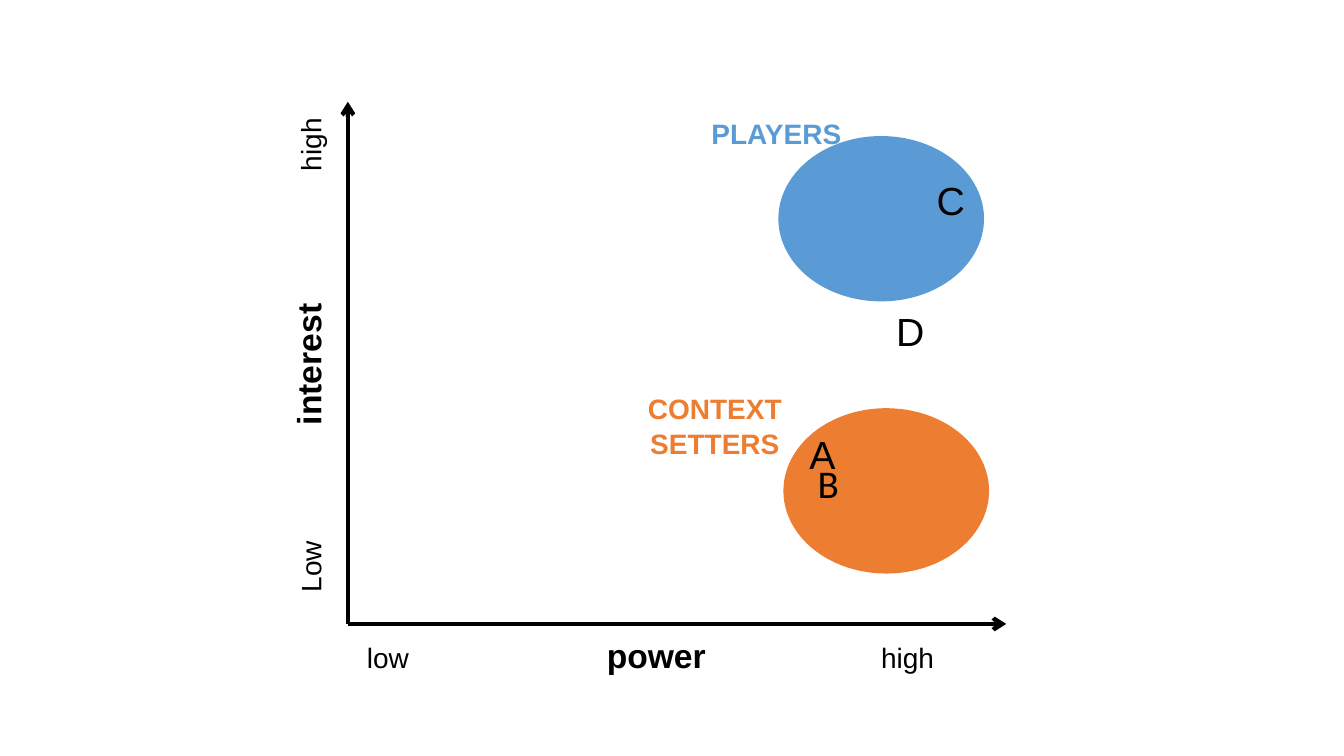
from lxml.etree import SubElement
from pptx import Presentation
from pptx.dml.color import RGBColor
from pptx.enum.shapes import MSO_CONNECTOR, MSO_SHAPE
from pptx.enum.text import PP_ALIGN
from pptx.oxml.ns import qn
from pptx.util import Inches, Pt

BLACK, BLUE, ORANGE = "000000", "5B9BD5", "ED7D31"


def color(value):
    return RGBColor.from_string(value)


def add_text(s, box, runs, fill=BLACK, font="Arial", align=PP_ALIGN.LEFT,
             wrap=True, rotation=0, tabs=()):
    """Add one paragraph; runs holds (text, size, bold), tabs holds inches."""
    sp = s.shapes.add_textbox(*map(Inches, box))
    sp.rotation = rotation
    tf = sp.text_frame
    tf.word_wrap = wrap
    p = tf.paragraphs[0]
    p.alignment = align
    if tabs:
        tab_list = SubElement(p._p.get_or_add_pPr(), qn("a:tabLst"))
        for position in tabs:
            SubElement(tab_list, qn("a:tab"), pos=str(Inches(position)), algn="l")
    for text, size, bold in runs:
        r = p.add_run()
        r.text = text
        r.font.name, r.font.size, r.font.bold = font, Pt(size), bold
        r.font.color.rgb = color(fill)


def add_axis(s, start, end):
    line = s.shapes.add_connector(MSO_CONNECTOR.STRAIGHT, *map(Inches, start + end))
    line.line.color.rgb = color(BLACK)
    line.line.width = Pt(3)
    SubElement(line.line._get_or_add_ln(), qn("a:tailEnd"), type="arrow")
    SubElement(line._element.spPr, qn("a:effectLst"))


def add_axis_labels(s, box, low, title, high, tabs, rotation=0):
    runs = [(low + "\t", 20, False), (title, 24, True), ("\t" + high, 20, False)]
    add_text(s, box, runs, tabs=tabs, rotation=rotation)


def add_axes(s, left, top, width, height):
    bottom = top + height
    add_axis(s, (left, bottom), (left + width, bottom))
    add_axis(s, (left, bottom), (left, top))
    add_axis_labels(s, (left + 0.09, bottom + 0.06, 6.52, 0.5),
                    "low", "power", "high", (2.38, 5.1))
    add_axis_labels(s, (left - 2.91, top + 2.2, 5.03, 0.5),
                    "Low", "interest", "high", (1.66, 4.18), rotation=270)


def add_group(s, left, top, fill, label_box, label):
    """Add an ellipse and its label, whose box is offset from the ellipse."""
    sp = s.shapes.add_shape(MSO_SHAPE.OVAL, *map(Inches, (left, top, 2.04, 1.64)))
    sp.shadow.inherit = False
    sp.fill.solid()
    sp.fill.fore_color.rgb = color(fill)
    sp.line.fill.background()
    dx, dy, width, height = label_box
    add_text(s, (left + dx, top + dy, width, height), label,
             fill=fill, align=PP_ALIGN.CENTER)


def add_stakeholders(s):
    for name, left, top, width, font in (
            ("C", 9.19, 1.7, 0.49, "Arial"), ("D", 8.79, 3, 0.49, "Arial"),
            ("A", 7.93, 4.22, 0.46, "Arial"), ("B", 8.01, 4.51, 0.42, "Calibri")):
        add_text(s, (left, top, width, 0.57), [(name, 28, False)],
                 font=font, wrap=False)


def main():
    prs = Presentation()
    prs.slide_width, prs.slide_height = Inches(13.33), Inches(7.5)
    s = prs.slides.add_slide(prs.slide_layouts[6])
    add_group(s, 7.77, 4.05, ORANGE, (-1.75, -0.27, 2.14, 0.84),
              [("CONTEXT", 20, True), (" ", 24, True), ("SETTERS", 20, True)])
    add_group(s, 7.72, 1.35, BLUE, (-1.09, -0.24, 2.14, 0.44),
              [("PLAYERS", 20, True)])
    add_axes(s, 3.45, 1.01, 6.53, 5.18)
    add_stakeholders(s)
    prs.save("out.pptx")


if __name__ == "__main__":
    main()
